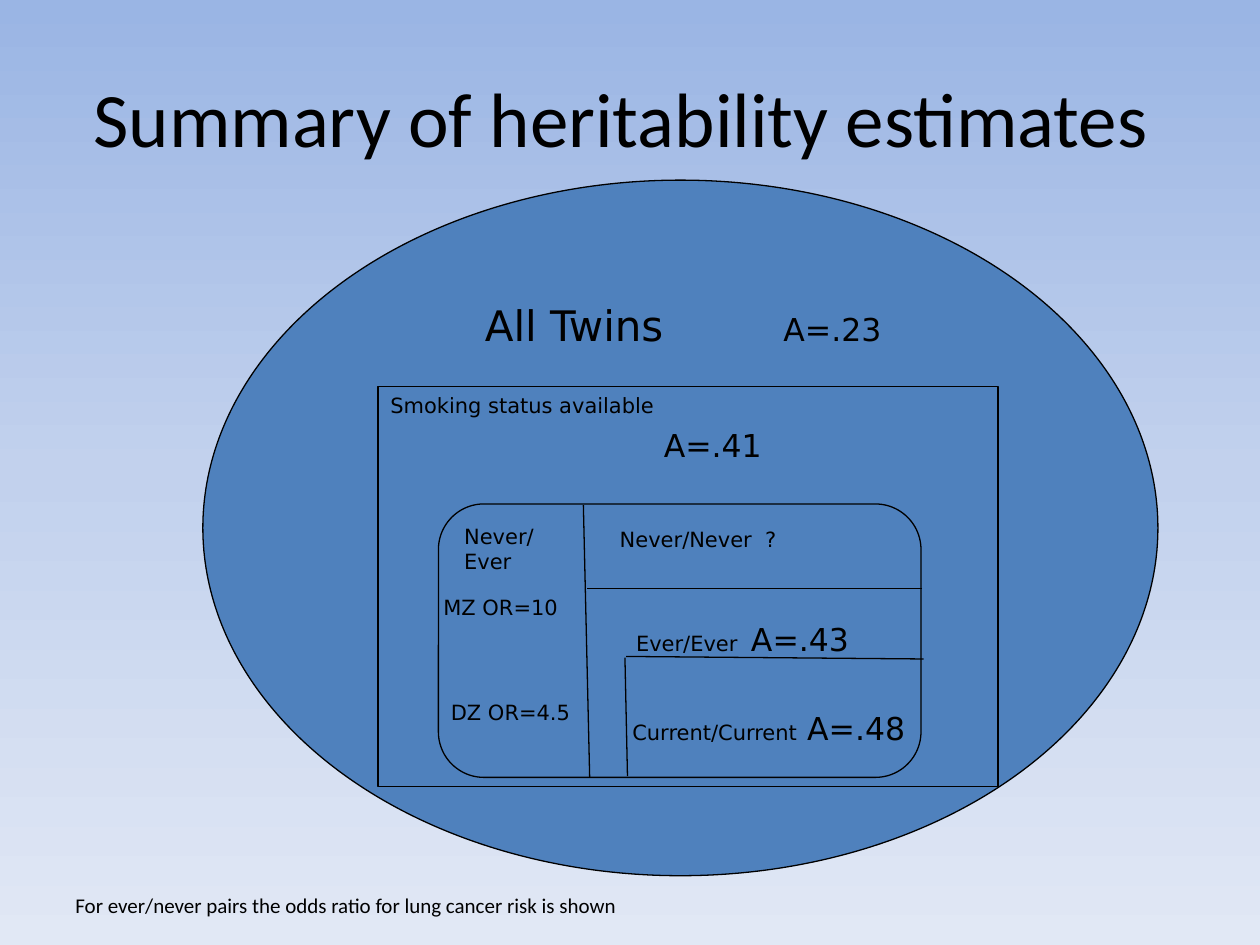
from copy import deepcopy

from lxml.etree import SubElement
from pptx import Presentation
from pptx.dml.color import RGBColor
from pptx.enum.shapes import MSO_CONNECTOR, MSO_SHAPE
from pptx.enum.text import MSO_ANCHOR, PP_ALIGN
from pptx.oxml.ns import qn
from pptx.util import Inches, Pt

COLUMNS, ROWS = 100, 75  # grid over the whole slide
BLACK, BLUE = "000000", "4F81BD"
SKY = [(0, "9AB5E4"), (0.5, "C2D1ED"), (1, "E1E8F5")]


def color(code):
    return RGBColor.from_string(code)


class Sketch:
    """Holds the style and the current slide; lengths are grid units."""

    heading_font, label_font = "Calibri", "DejaVu Sans"
    line_width = Pt(0.75)

    def __init__(self, deck):
        self.unit_x = deck.slide_width / COLUMNS
        self.unit_y = deck.slide_height / ROWS
        self.page = deck.slides.add_slide(deck.slide_layouts[5])

    def place(self, left, top, width, height):
        return (round(left * self.unit_x), round(top * self.unit_y),
                round(width * self.unit_x), round(height * self.unit_y))

    def style(self, font, size, name):
        font.size, font.name = Pt(size), name
        font.color.rgb = color(BLACK)

    def background(self, stops):
        fill = self.page.background.fill
        fill.gradient()
        fill.gradient_angle = 270
        stop_list = next(self.page.element.iter(qn("a:gsLst")))
        stop_list.append(deepcopy(stop_list[0]))
        for stop, (position, code) in zip(fill.gradient_stops, stops):
            stop.position = position
            stop.color.rgb = color(code)

    def title(self, text, area):
        box = self.page.shapes.title
        box.left, box.top, box.width, box.height = self.place(*area)
        frame = box.text_frame
        frame.text = text
        frame.vertical_anchor = MSO_ANCHOR.MIDDLE
        para = frame.paragraphs[0]
        para.alignment = PP_ALIGN.CENTER
        self.style(para.font, 44, self.heading_font)

    def set_lines(self, frame, lines, font=None):
        """Each line is a list of (text, size) spans."""
        for index, spans in enumerate(lines):
            para = frame.add_paragraph() if index else frame.paragraphs[0]
            para.alignment = PP_ALIGN.LEFT
            self.style(para.font, spans[0][1], font or self.label_font)
            for text, size in spans:
                span = para.add_run()
                span.text = text
                if size != spans[0][1]:
                    span.font.size = Pt(size)

    def label(self, area, *spans, wrap=True, font=None, anchor=MSO_ANCHOR.TOP):
        box = self.page.shapes.add_textbox(*self.place(*area))
        frame = box.text_frame
        frame.word_wrap = wrap
        frame.vertical_anchor = anchor
        self.set_lines(frame, [spans], font)
        return frame.paragraphs[0]

    def region(self, kind, area, *lines):
        shape = self.page.shapes.add_shape(kind, *self.place(*area))
        shape.shadow.inherit = False
        shape.fill.solid()
        shape.fill.fore_color.rgb = color(BLUE)
        shape.line.color.rgb = color(BLACK)
        shape.line.width = self.line_width
        shape.text_frame.vertical_anchor = MSO_ANCHOR.TOP
        self.set_lines(shape.text_frame, [[(text, 12)] for text in lines])

    def divider(self, x1, y1, x2, y2):
        line = self.page.shapes.add_connector(
            MSO_CONNECTOR.STRAIGHT, *self.place(x1, y1, x2, y2))
        line.line.color.rgb = color(BLACK)
        line.line.width = self.line_width
        SubElement(line._element.spPr, qn("a:effectLst"))


def set_tab(para, position):
    tabs = SubElement(para._p.get_or_add_pPr(), qn("a:tabLst"))
    SubElement(tabs, qn("a:tab"), pos=str(position), algn="l")
    # The schema wants tab stops ahead of the default run properties
    tabs.getparent().insert(0, tabs)


def main():
    deck = Presentation()
    deck.slide_width, deck.slide_height = Inches(10), Inches(7.5)
    sketch = Sketch(deck)
    sketch.background(SKY)

    # Title and footnote
    sketch.title("Summary of heritability estimates ", (5, 3, 90, 12.5))
    sketch.label(
        (5, 68.3, 82.5, 5),
        ("For ever/never pairs the odds ratio for lung cancer risk is shown", 12),
        font=sketch.heading_font, anchor=MSO_ANCHOR.BOTTOM)

    # Nested groups of twins
    sketch.region(MSO_SHAPE.OVAL, (16.1, 14.3, 75.8, 55.2))
    sketch.region(MSO_SHAPE.RECTANGLE, (30, 30.7, 49.2, 31.7),
                  "Smoking status available")
    sketch.region(MSO_SHAPE.ROUNDED_RECTANGLE, (34.8, 40, 38.3, 21.7),
                  "Never/", "Ever")

    # Dividers between the smoking pairs
    for ends in [(46.3, 40.1, 46.8, 61.7), (46.6, 46.7, 73.2, 46.7),
                 (73.3, 52.3, 49.7, 52.1), (49.6, 52.2, 49.8, 61.6)]:
        sketch.divider(*ends)

    # Estimates for each group
    all_twins = sketch.label((37.5, 23.3, 35, 5),
                             ("All Twins", 24), ("\tA=.23", 18))
    set_tab(all_twins, Inches(2.37))
    sketch.label((51.7, 33.3, 11.7, 4), ("A=.41", 18))
    sketch.label((48.2, 41.3, 14.8, 3), ("Never/Never  ?", 12), wrap=False)
    sketch.label((49.5, 48.7, 19.4, 4),
                 ("Ever/Ever  ", 12), ("A=.43", 18), (" ", 12), wrap=False)
    sketch.label((49.2, 55.8, 25.8, 4),
                 ("Current/Current", 12), (" A=.48", 18))

    # Odds ratios for never/ever pairs
    sketch.label((34.2, 46.7, 12.1, 3), ("MZ OR=10", 12))
    sketch.label((34.8, 55, 11.7, 3), ("DZ OR=4.5", 12), wrap=False)

    deck.save("out.pptx")


if __name__ == "__main__":
    main()
